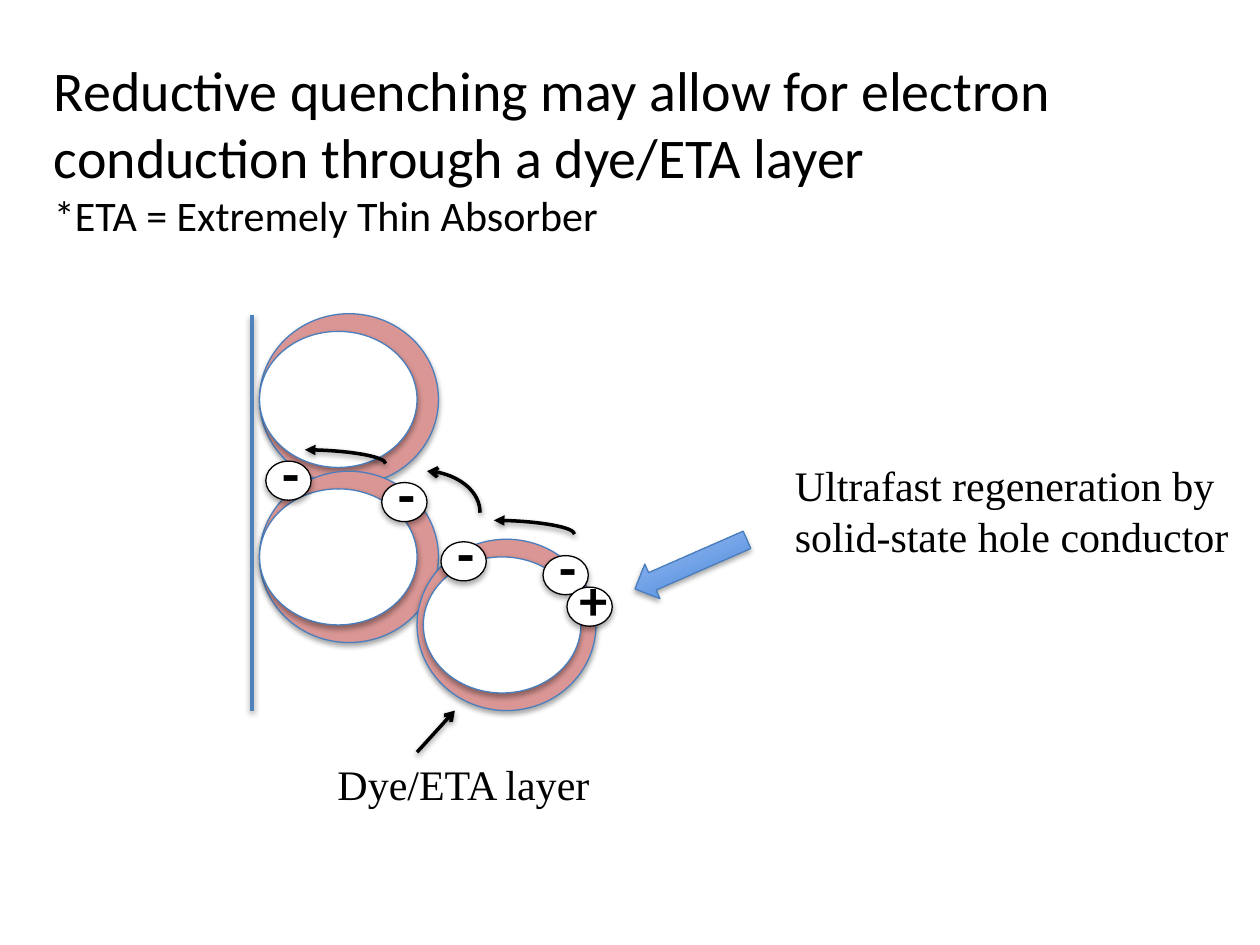
from dataclasses import dataclass

from lxml import etree
from pptx import Presentation
from pptx.dml.color import RGBColor
from pptx.enum.shapes import MSO_CONNECTOR, MSO_SHAPE
from pptx.enum.text import MSO_AUTO_SIZE
from pptx.oxml.ns import qn
from pptx.util import Inches, Pt

ELLIPSE = MSO_SHAPE.OVAL
ARROW = MSO_SHAPE.RIGHT_ARROW
STRAIGHT = MSO_CONNECTOR.STRAIGHT
CURVE = MSO_CONNECTOR.CURVE
FIT_TEXT = MSO_AUTO_SIZE.SHAPE_TO_FIT_TEXT


@dataclass(frozen=True)
class Theme:
    black: str = "000000"
    white: str = "FFFFFF"
    dye: str = "D99694"
    outline: str = "4B7EBC"
    electrode: str = "4F81BD"
    arrow_dark: str = "3F80CE"
    arrow_light: str = "A4C4FF"
    sans: str = "Calibri"
    serif: str = "Times New Roman"
    large: int = 32
    small: int = 24
    thin: float = 0.75
    thick: float = 2


THEME = Theme()


def rgb(value):
    return RGBColor.from_string(value)


def add_shadow(effects, distance, alpha):
    shadow = etree.SubElement(effects, qn("a:outerShdw"), blurRad="40000",
                              dist=str(distance), dir="5400000", rotWithShape="0")
    color = etree.SubElement(shadow, qn("a:srgbClr"), val=THEME.black)
    etree.SubElement(color, qn("a:alpha"), val=str(alpha))


def add_text(shapes, box, lines, size=THEME.small, font=THEME.serif, bold=False, wrap=False):
    tb = shapes.add_textbox(*map(Inches, box))
    tf = tb.text_frame
    tf.word_wrap = wrap
    tf.auto_size = FIT_TEXT
    for i, line in enumerate(lines):
        text, points = line if isinstance(line, tuple) else (line, size)
        p = tf.paragraphs[0] if i == 0 else tf.add_paragraph()
        r = p.add_run()
        r.text = text
        r.font.size = Pt(points)
        r.font.name = font
        r.font.bold = bold
        r.font.color.rgb = rgb(THEME.black)
    return tb


def add_solid(shapes, kind, box, fill, line=THEME.outline):
    sp = shapes.add_shape(kind, *map(Inches, box))
    sp.fill.solid()
    sp.fill.fore_color.rgb = rgb(fill)
    sp.line.color.rgb = rgb(line)
    sp.line.width = Pt(THEME.thin)
    sp.shadow.inherit = False
    add_shadow(sp._element.spPr.find(qn("a:effectLst")), 23000, 35000)
    return sp


def add_line(shapes, begin, end, color=THEME.black, head=None, kind=STRAIGHT):
    cn = shapes.add_connector(kind, *map(Inches, (*begin, *end)))
    cn.line.color.rgb = rgb(color)
    cn.line.width = Pt(THEME.thick)
    if head:
        etree.SubElement(cn.line._get_or_add_ln(), qn("a:tailEnd"), type=head)
    add_shadow(etree.SubElement(cn._element.spPr, qn("a:effectLst")), 20000, 38000)
    return cn


def add_hop(shapes, begin, end, head="triangle"):
    cn = add_line(shapes, begin, end, head=head, kind=CURVE)
    (x1, y1), (x2, y2) = begin, end
    w, h = y1 - y2, x1 - x2
    cn.left, cn.top = Inches((x1 + x2 - w) / 2), Inches((y1 + y2 - h) / 2)
    cn.width, cn.height = Inches(w), Inches(h)
    xfrm = cn._element.spPr.find(qn("a:xfrm"))
    xfrm.attrib.pop("flipH", None)
    xfrm.set("rot", "16200000")
    xfrm.set("flipV", "1")
    cn._element.spPr.find(qn("a:prstGeom")).set("prst", "curvedConnector2")


def add_particle(shapes, x, y, inset=0):
    group = shapes.add_group_shape().shapes
    add_solid(group, ELLIPSE, (x, y, 1.42, 1.36), THEME.dye)
    add_solid(group, ELLIPSE, (x + inset, y + 0.14, 1.25, 1.08), THEME.white)


def add_charge(shapes, x, y, sign, shift=0.03):
    group = shapes.add_group_shape().shapes
    add_solid(group, ELLIPSE, (x, y, 0.36, 0.31), THEME.white, THEME.black)
    add_text(group, (x + shift, y - 0.23, 0.56, 0.64), [sign],
             size=THEME.large, font=THEME.sans, bold=True, wrap=True)


def add_block_arrow(shapes, box):
    sp = add_solid(shapes, ARROW, box, THEME.arrow_dark)
    sp.fill.gradient()
    sp.fill.gradient_angle = 90
    for stop, color in zip(sp.fill.gradient_stops, (THEME.arrow_dark, THEME.arrow_light)):
        stop.color.rgb = rgb(color)
    for stop, position in zip(sp.fill.gradient_stops, (0, 1)):
        stop.position = position
    sp.rotation = 336.3
    sp._element.spPr.find(qn("a:xfrm")).set("flipH", "1")


def add_title(shapes, box):
    add_text(shapes, box, ["Reductive quenching may allow for electron",
                           "conduction through a dye/ETA layer",
                           ("*ETA = Extremely Thin Absorber", THEME.small)],
             size=THEME.large, font=THEME.sans)


def add_diagram(shapes, box):
    x, y, w, h = box
    add_line(shapes, (x, y), (x, y + h), color=THEME.electrode)
    for dx, dy, inset in ((0.06, -0.01, 0), (0.06, 1.24, 0), (1.31, 1.78, 0.05)):
        add_particle(shapes, x + dx, y + dy, inset)
    for dx, dy in ((2.31, 1.91), (1.5, 1.8), (1.03, 1.33), (0.11, 1.16)):
        add_charge(shapes, x + dx, y + dy, "-")
    for dx, dy in ((2.56, 1.74), (1.06, 1.18)):
        add_hop(shapes, (x + dx, y + dy), (x + dx - 0.64, y + dy - 0.11))
    add_hop(shapes, (x + 1.81, y + 1.57), (x + 1.39, y + 1.24), head="arrow")
    add_block_arrow(shapes, (x + w - 0.97, y + 1.83, 0.97, 0.3))
    add_charge(shapes, x + 2.5, y + 2.16, "+", shift=0)


def add_labels(shapes, box):
    x, y, w, h = box
    add_text(shapes, (x + w - 3.68, y, 3.68, 0.91),
             ["Ultrafast regeneration by", "solid-state hole conductor"])
    add_text(shapes, (x, y + h - 0.5, 2.22, 0.5), ["Dye/ETA layer"])
    add_line(shapes, (x + 0.73, y + h - 0.5), (x + 1.03, y + h - 0.83), head="arrow")


def main():
    prs = Presentation()
    prs.slide_width, prs.slide_height = Inches(10), Inches(7.5)
    s = prs.slides.add_slide(prs.slide_layouts[6])
    add_diagram(s.shapes, (2, 2.5, 3.97, 3.14))
    add_title(s.shapes, (0.33, 0.39, 8.22, 1.58))
    add_labels(s.shapes, (2.58, 3.6, 7.31, 2.87))
    prs.save("out.pptx")


if __name__ == "__main__":
    main()
